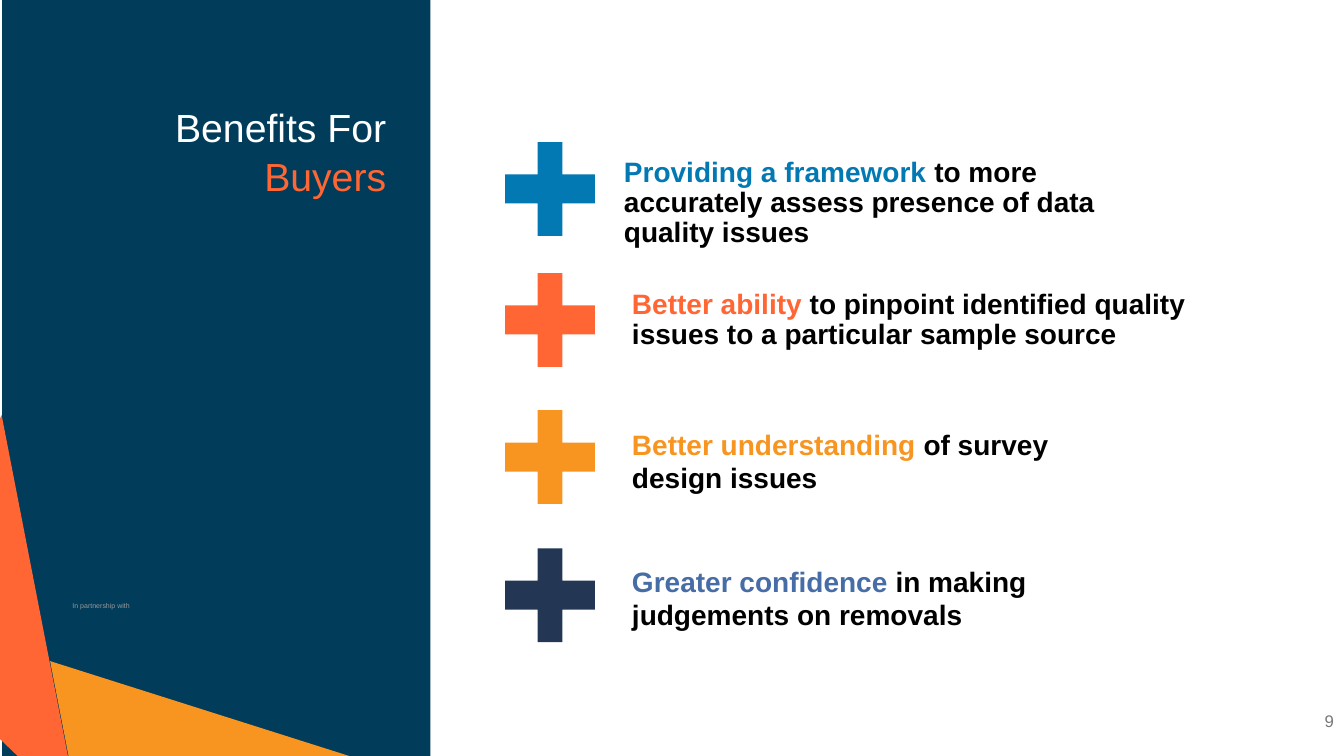
"""Build the slide on benefits for buyers."""
import pptx
import pptx.dml.color
import pptx.enum.shapes
import pptx.enum.text
import pptx.util

PX = 9144
COLOURS = {
    "navy": "013C5A", "yellow": "F79520", "orange": "FF6633", "blue": "0279B3",
    "ink": "233653", "steel": "466DA6", "black": "000000", "white": "FFFFFF",
    "silver": "999999", "grey": "797979",
}
SHAPES = pptx.enum.shapes.MSO_SHAPE
ANCHOR = pptx.enum.text.MSO_ANCHOR
ALIGN = pptx.enum.text.PP_ALIGN
GROW = pptx.enum.text.MSO_AUTO_SIZE.SHAPE_TO_FIT_TEXT

BENEFITS = [
    (141, "blue", "blue", (609, 152, 574, 71), 0.9,
     "Providing a framework ", "to more accurately assess presence of data quality issues"),
    (271, "orange", "orange", (617, 283, 586, 71), 0.9,
     "Better ability", " to pinpoint identified quality issues to a particular sample source"),
    (407, "yellow", "yellow", (617, 419, 486, 77), 1.0,
     "Better understanding ", "of survey design issues"),
    (544, "ink", "steel", (617, 555, 553, 77), 1.0,
     "Greater confidence ", "in making judgements on removals"),
]


def px(*lengths):
    """Turn pixel lengths into EMU."""
    return [length * PX for length in lengths]


def rgb(name):
    """Return the named colour."""
    return pptx.dml.color.RGBColor.from_string(COLOURS[name])


def apply(target, values):
    """Set each format value on the target."""
    for key, value in values.items():
        setattr(target, key, value)


def add_block(slide, kind, box, colour, rotation=0):
    """Add a filled preset shape without outline or shadow."""
    block = slide.shapes.add_shape(kind, *px(*box))
    block.rotation = rotation
    block.shadow.inherit = False
    block.fill.solid()
    block.fill.fore_color.rgb = rgb(colour)
    block.line.fill.background()
    return block


def write(frame, runs, size, frame_format, paragraph_format, bold=False):
    """Write one paragraph of coloured runs."""
    apply(frame, {"word_wrap": True, **frame_format})
    paragraph = frame.paragraphs[0]
    apply(paragraph, paragraph_format)
    for text, colour in runs:
        run = paragraph.add_run()
        run.text = text
        apply(run.font, {"name": "Arial", "size": pptx.util.Pt(size), "bold": bold})
        run.font.color.rgb = rgb(colour)


def add_label(slide, box, *text):
    """Add a text box holding one paragraph."""
    write(slide.shapes.add_textbox(*px(*box)).text_frame, *text)


def place_title(slide):
    """Move and fill the title placeholder."""
    title = slide.shapes.title
    apply(title, dict(zip(("left", "top", "width", "height"), px(121, 100, 262, 337))))
    margins = dict.fromkeys(("margin_left", "margin_top", "margin_right", "margin_bottom"), 0)
    write(title.text_frame, [("Benefits For ", "white"), ("Buyers", "orange")], 28,
          {"vertical_anchor": ANCHOR.TOP, **margins},
          {"alignment": ALIGN.RIGHT, "line_spacing": 1.05})


def add_benefit(slide, top, plus_colour, lead_colour, box, spacing, lead, rest):
    """Add a plus sign and the benefit beside it."""
    plus = add_block(slide, SHAPES.CROSS, (501, top, 89, 93), plus_colour)
    plus.adjustments[0] = 0.361
    add_label(slide, box, [(lead, lead_colour), (rest, "black")], 20,
              {"auto_size": GROW}, {"line_spacing": spacing}, True)


def main():
    """Build and save the slide."""
    deck = pptx.Presentation()
    deck.slide_width, deck.slide_height = px(1333, 750)
    slide = deck.slides.add_slide(deck.slide_layouts[5])
    add_block(slide, SHAPES.RECTANGLE, (2, 0, 425, 750), "navy")
    add_block(slide, SHAPES.RIGHT_TRIANGLE, (62, 627, 288, 157), "yellow", 349)
    add_block(slide, SHAPES.ISOSCELES_TRIANGLE, (-232, 553, 405, 142), "orange", 259)
    add_label(slide, (62, 592, 105, 19), [("In partnership with", "silver")], 5,
              {"auto_size": GROW}, {})
    place_title(slide)
    title = slide.shapes.title._element
    title.getparent().append(title)
    add_label(slide, (1033, 695, 300, 40), [("9", "grey")], 12,
              {"vertical_anchor": ANCHOR.MIDDLE}, {"alignment": ALIGN.RIGHT})
    for benefit in BENEFITS:
        add_benefit(slide, *benefit)
    deck.save("out.pptx")


if __name__ == "__main__":
    main()
